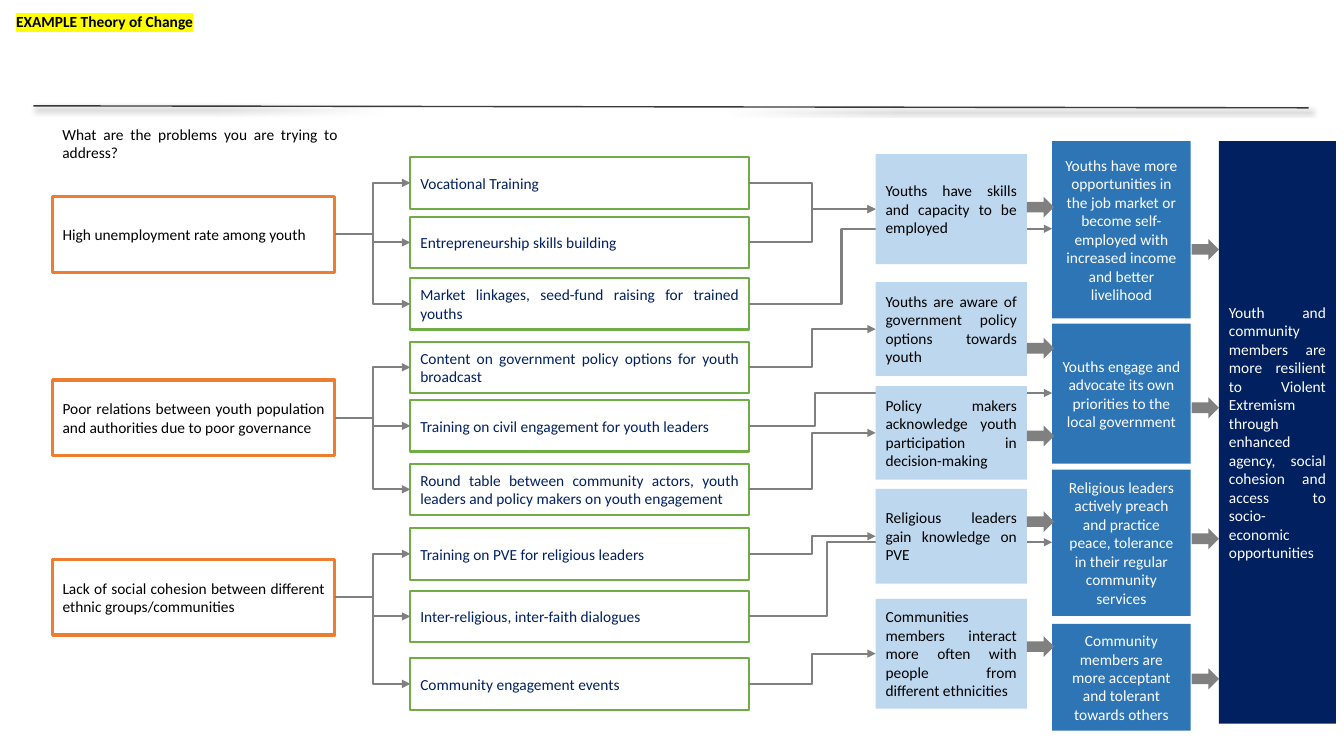
from dataclasses import dataclass

from lxml import etree
from pptx import Presentation, util as u
from pptx.dml.color import RGBColor
from pptx.enum import shapes, text
from pptx.oxml.ns import qn

# The grid has ten columns and ten rows to the inch.
COLUMNS, ROWS = 133.3, 75
GREY, BLACK, NAVY, WHITE = "808080", "000000", "002060", "FFFFFF"
JUSTIFY, CENTER = text.PP_ALIGN.JUSTIFY, text.PP_ALIGN.CENTER
LEFT_SIDE, RIGHT_SIDE = 1, 3


@dataclass
class Stage:
    """One column of boxes; each box is (top row, rows high, wording)."""
    left: float
    width: float
    boxes: list
    fill: str = ""
    line: str = ""
    line_width: float = 1.5
    color: str = BLACK
    align: text.PP_ALIGN = JUSTIFY


@dataclass
class LongLink:
    """A link from an activity past the outputs to an outcome."""
    activity: int
    outcome: int
    row: float
    bend: float


PROBLEMS = Stage(5.22, 28, [
    (19.5, 7.5, "High unemployment rate among youth"),
    (37.7, 7.5, "Poor relations between youth population and authorities due to poor governance"),
    (55.5, 7.5, "Lack of social cohesion between different ethnic groups/communities"),
], line="ED7D31", line_width=2.25)

ACTIVITIES = Stage(40.7, 33.6, [(top, 5.1, words) for top, words in [
    (15.6, "Vocational Training"),
    (21.5, "Entrepreneurship skills building"),
    (27.6, "Market linkages, seed-fund raising for trained youths"),
    (33.9, "Content on government policy options for youth broadcast"),
    (39.7, "Training on civil engagement for youth leaders"),
    (46, "Round table between community actors, youth leaders and policy makers on youth engagement"),
    (52.4, "Training on PVE for religious leaders"),
    (58.6, "Inter-religious, inter-faith dialogues"),
    (65.3, "Community engagement events"),
]], line="70AD47", color=NAVY)

OUTPUTS = Stage(86.85, 15, [
    (15.3, 10.9, "Youths have skills and capacity to be employed"),
    (28, 9.3, "Youths are aware of government policy options towards youth"),
    (38.3, 9.3, "Policy makers acknowledge youth participation in decision-making"),
    (48.5, 9.4, "Religious leaders gain knowledge on PVE"),
    (59.4, 10.9, "Communities members interact more often with people from different ethnicities"),
], fill="BDD7EE")

OUTCOMES = Stage(104.35, 13.75, [
    (14, 17.6, "Youths have more opportunities in the job market or become "
               "self-employed with increased income and better livelihood"),
    (32.1, 13.9, "Youths engage and advocate its own priorities to the local government"),
    (46.6, 14.5, "Religious leaders actively preach and practice peace, "
                 "tolerance in their regular community services"),
    (61.9, 10.6, "Community members are more acceptant and tolerant towards others"),
], fill="2E75B6", color=WHITE, align=CENTER)

IMPACT = Stage(120.9, 11.6, [
    (14, 57.8, "Youth and community members are more resilient to Violent Extremism through "
               "enhanced agency, social cohesion and access to socio-economic opportunities"),
], fill=NAVY, color=WHITE)

OUTPUT_OF_ACTIVITY = {0: 0, 1: 0, 3: 1, 5: 2, 6: 3, 8: 4}
LONG_LINKS = [LongLink(2, 0, 22.7, 0.305), LongLink(4, 1, 39, 0.218), LongLink(7, 2, 53.8, 0.257)]
BLOCK_ARROWS = {101.85: [19.5, 33.5, 42.2, 50.7, 63.1], 118.2: [23.7, 39.4, 52.4, 66.3]}


def grid(*cells: float) -> list:
    return [u.Inches(cell / 10) for cell in cells]


def rgb(color: str) -> RGBColor:
    return RGBColor.from_string(color)


def write(sp, words: str, *, color=BLACK, align=JUSTIFY, bold=False,
          anchor=text.MSO_ANCHOR.TOP, highlight=""):
    tf = sp.text_frame
    tf.word_wrap = True
    tf.auto_size = text.MSO_AUTO_SIZE.NONE
    tf.vertical_anchor = anchor
    p = tf.paragraphs[0]
    p.alignment = align
    r = p.add_run()
    r.text = words
    r.font.size, r.font.bold = u.Pt(11), bold
    r.font.color.rgb = rgb(color)
    if highlight:
        mark = etree.SubElement(r.font._element, qn("a:highlight"))
        etree.SubElement(mark, qn("a:srgbClr"), val=highlight)
    r.font.name = "Calibri"


def add_block(s, kind, place: list, fill="", line="", line_width=1.5):
    sp = s.shapes.add_shape(kind, *place)
    sp.shadow.inherit = False
    if fill:
        sp.fill.solid()
        sp.fill.fore_color.rgb = rgb(fill)
    else:
        sp.fill.background()
    if line:
        sp.line.color.rgb = rgb(line)
        sp.line.width = u.Pt(line_width)
    else:
        sp.line.fill.background()
    return sp


def add_stage(s, stage: Stage) -> list:
    drawn = []
    for top, height, words in stage.boxes:
        sp = add_block(s, shapes.MSO_SHAPE.RECTANGLE, grid(stage.left, top, stage.width, height),
                       stage.fill, stage.line, stage.line_width)
        write(sp, words, color=stage.color, align=stage.align, anchor=text.MSO_ANCHOR.MIDDLE)
        drawn.append(sp)
    return drawn


def add_line(s, kind, ends: list, color: str, width: float):
    """Draw a connector and return it with its empty effect list."""
    cxn = s.shapes.add_connector(kind, *ends)
    cxn.line.color.rgb = rgb(color)
    cxn.line.width = u.Pt(width)
    effects = etree.SubElement(cxn._element.spPr, qn("a:effectLst"))
    return cxn, effects


def add_link(s, source, x: int, y: int, target=None, bend=0.5):
    start = [source.left + source.width, source.top + source.height // 2]
    cxn, _ = add_line(s, shapes.MSO_CONNECTOR.ELBOW, [*start, x, y], GREY, 1.5)
    cxn.begin_connect(source, RIGHT_SIDE)
    if target is not None:
        cxn.end_connect(target, LEFT_SIDE)
    etree.SubElement(cxn.line._get_or_add_ln(), qn("a:tailEnd"), type="triangle")
    geometry = cxn._element.spPr.find(qn("a:prstGeom"))
    adjust = geometry.find(qn("a:avLst"))
    if adjust is None:
        adjust = etree.SubElement(geometry, qn("a:avLst"))
    etree.SubElement(adjust, qn("a:gd"), name="adj1", fmla=f"val {round(bend * 100000)}")


def join(s, source, target):
    add_link(s, source, target.left, target.top + target.height // 2, target)


def add_header(s):
    title = s.shapes.title
    title.left, title.top, title.width, title.height = grid(0.6, 0.7, 32.6, 2.9)
    write(title, "EXAMPLE Theory of Change", bold=True, highlight="FFFF00")
    _, effects = add_line(s, shapes.MSO_CONNECTOR.STRAIGHT, grid(3.3, 10.5, 129.8, 10.7), "3B3838", 1)
    shadow = etree.SubElement(effects, qn("a:outerShdw"), blurRad=str(u.Pt(4)), dist=str(u.Pt(3)),
                              dir="2700000", algn="tl", rotWithShape="0")
    black = etree.SubElement(shadow, qn("a:srgbClr"), val=BLACK)
    etree.SubElement(black, qn("a:alpha"), val="40000")
    question = s.shapes.add_textbox(*grid(5.2, 11.9, 29.3, 4.7))
    write(question, "What are the problems you are trying to address?")


def main():
    prs = Presentation()
    prs.slide_width, prs.slide_height = grid(COLUMNS, ROWS)
    s = prs.slides.add_slide(prs.slide_layouts[5])
    add_header(s)
    problems = add_stage(s, PROBLEMS)
    activities = add_stage(s, ACTIVITIES)
    for link in LONG_LINKS:
        add_link(s, activities[link.activity], *grid(OUTCOMES.left, link.row), bend=link.bend)
    outputs = add_stage(s, OUTPUTS)
    add_stage(s, OUTCOMES)
    add_stage(s, IMPACT)
    for i, activity in enumerate(activities):
        join(s, problems[i // 3], activity)
    for i, output in OUTPUT_OF_ACTIVITY.items():
        join(s, activities[i], outputs[output])
    for left, tops in BLOCK_ARROWS.items():
        for top in tops:
            add_block(s, shapes.MSO_SHAPE.RIGHT_ARROW, grid(left, top, 2.7, 2.1), GREY)
    prs.save("out.pptx")


if __name__ == "__main__":
    main()
